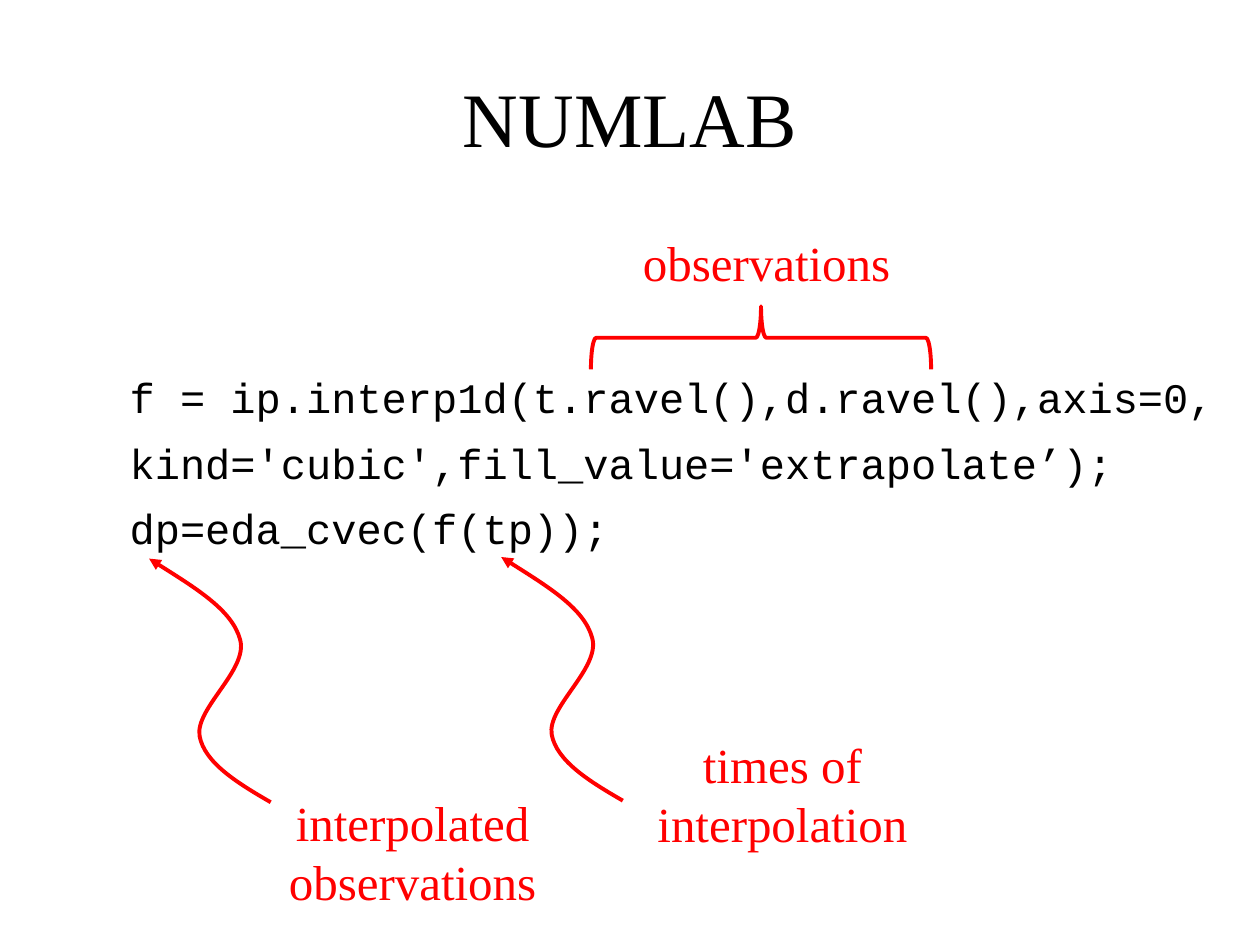
"""Build a slide annotating the inputs and output of an interpolation call."""
from lxml import etree
from pptx import Presentation
from pptx.dml.color import RGBColor
from pptx.enum.shapes import MSO_SHAPE
from pptx.enum.text import MSO_ANCHOR, MSO_AUTO_SIZE, PP_ALIGN
from pptx.oxml.ns import qn
from pptx.util import Pt

BRACE = MSO_SHAPE.RIGHT_BRACE
TOP, MIDDLE = MSO_ANCHOR.TOP, MSO_ANCHOR.MIDDLE
FIT, FIXED = MSO_AUTO_SIZE.SHAPE_TO_FIT_TEXT, MSO_AUTO_SIZE.NONE
LEFT, CENTER = PP_ALIGN.LEFT, PP_ALIGN.CENTER
RED, BLACK = "FF0000", "000000"

deck = Presentation()
deck.slide_width, deck.slide_height = Pt(720), Pt(540)
slide = deck.slides.add_slide(deck.slide_layouts[6])


def add_text(text, left, top, width, height, size=28, color=RED,
             font="Times New Roman", align=CENTER, anchor=TOP,
             fit=FIT, wrap=True, before=0):
    frame = slide.shapes.add_textbox(
        Pt(left), Pt(top), Pt(width), Pt(height)).text_frame
    frame.word_wrap, frame.auto_size = wrap, fit
    frame.vertical_anchor = anchor
    frame.text = text
    for paragraph in frame.paragraphs:
        paragraph.alignment = align
        paragraph.space_before = Pt(before)
        for run in paragraph.runs:
            run.font.name, run.font.size = font, Pt(size)
            run.font.color.rgb = RGBColor.from_string(color)


def style_outline(shape):
    shape.shadow.inherit = False
    shape.fill.background()
    shape.line.color.rgb = RGBColor.from_string(RED)
    shape.line.width = Pt(2.25)


add_text("NUMLAB", 36, 21.6, 648, 90, size=44, color=BLACK,
         anchor=MIDDLE, fit=FIXED)

observations_brace = slide.shapes.add_shape(
    BRACE, Pt(416.9), Pt(95.8), Pt(36), Pt(194.4))
observations_brace.rotation = 270
style_outline(observations_brace)

squiggle = [(23.8, 15.1), (47.5, 29.5), (52, 46.2),
            (57, 63.4), (26, 85.7), (28.9, 101.5),
            (31.7, 116.6), (50.4, 128.2), (69.5, 139.2)]
for tip_x, tip_y in [(286.4, 318.3), (85.2, 319.2)]:
    builder = slide.shapes.build_freeform(Pt(tip_x), Pt(tip_y))
    builder.add_line_segments(
        [(Pt(tip_x + dx), Pt(tip_y + dy)) for dx, dy in squiggle], close=False)
    pointer = builder.convert_to_shape()
    style_outline(pointer)
    segments = list(pointer._element.iter(qn("a:lnTo")))
    for start in range(0, len(segments), 3):
        curve = etree.Element(qn("a:cubicBezTo"))
        segments[start].addprevious(curve)
        for segment in segments[start:start + 3]:
            curve.append(segment[0])
            segment.getparent().remove(segment)
    etree.SubElement(pointer.line._get_or_add_ln(), qn("a:headEnd"),
                     type="triangle")

add_text("observations", 360, 129.6, 156.2, 41)
add_text("times of interpolation", 360, 416.2, 174.2, 74.9)
add_text("interpolated observations", 157.7, 449.3, 156.2, 74.9)
add_text("f = ip.interp1d(t.ravel(),d.ravel(),axis=0,\n"
         "kind='cubic',fill_value='extrapolate’);\n"
         "dp=eda_cvec(f(tp));",
         67, 208.1, 638.6, 112.3, size=24, color=BLACK, font="Courier New",
         align=LEFT, anchor=MIDDLE, wrap=False, before=8.6)

deck.save("out.pptx")
